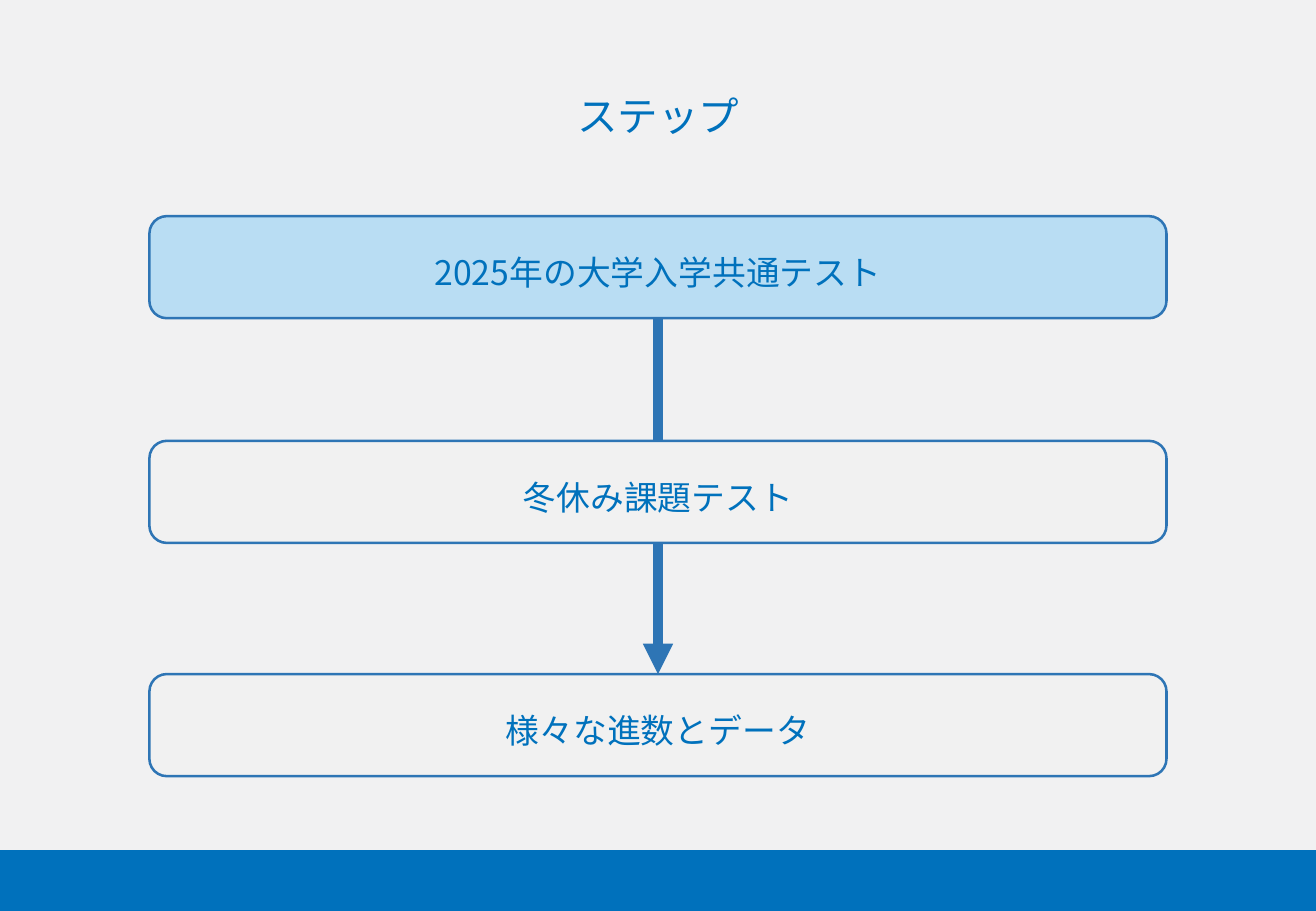
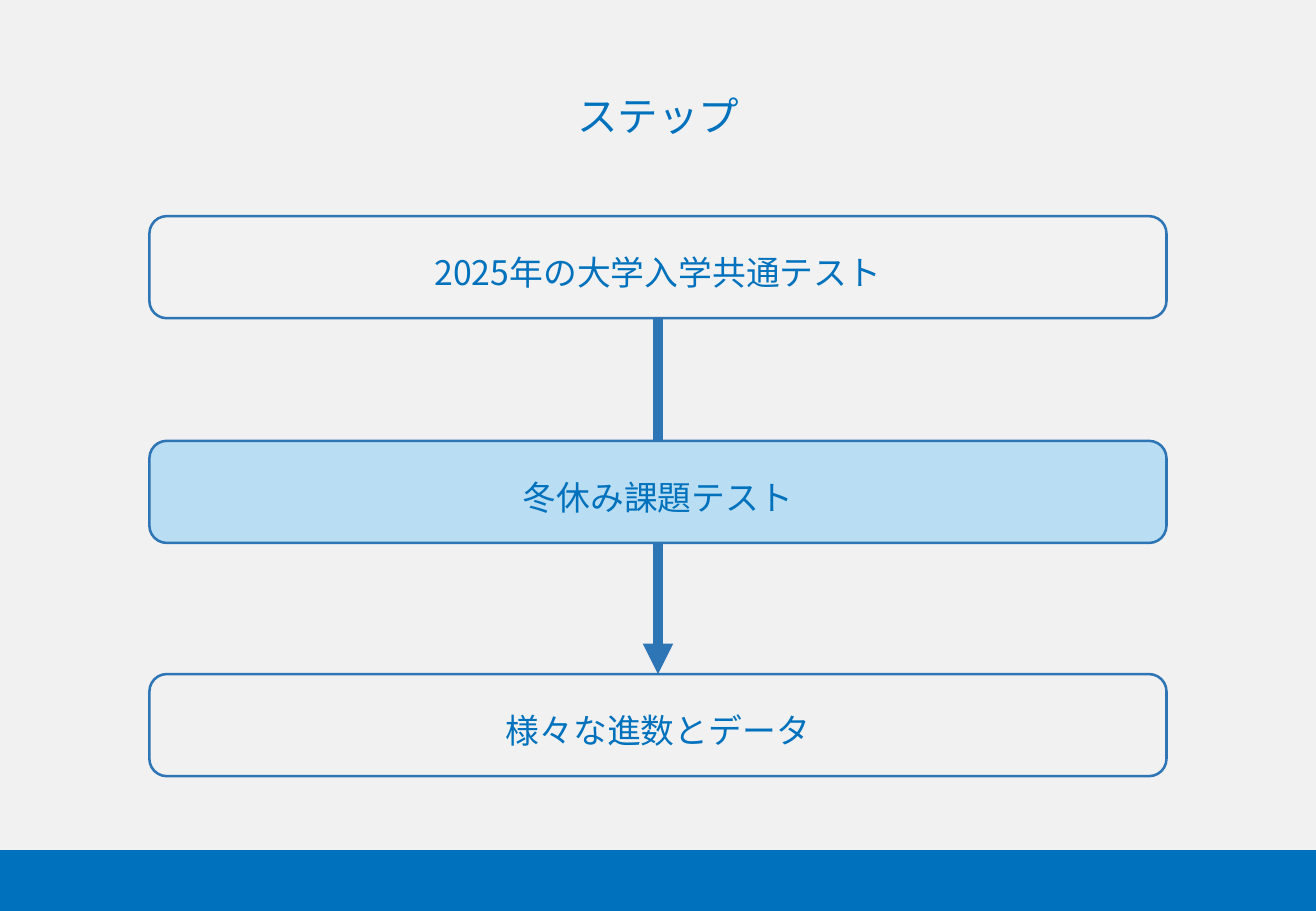
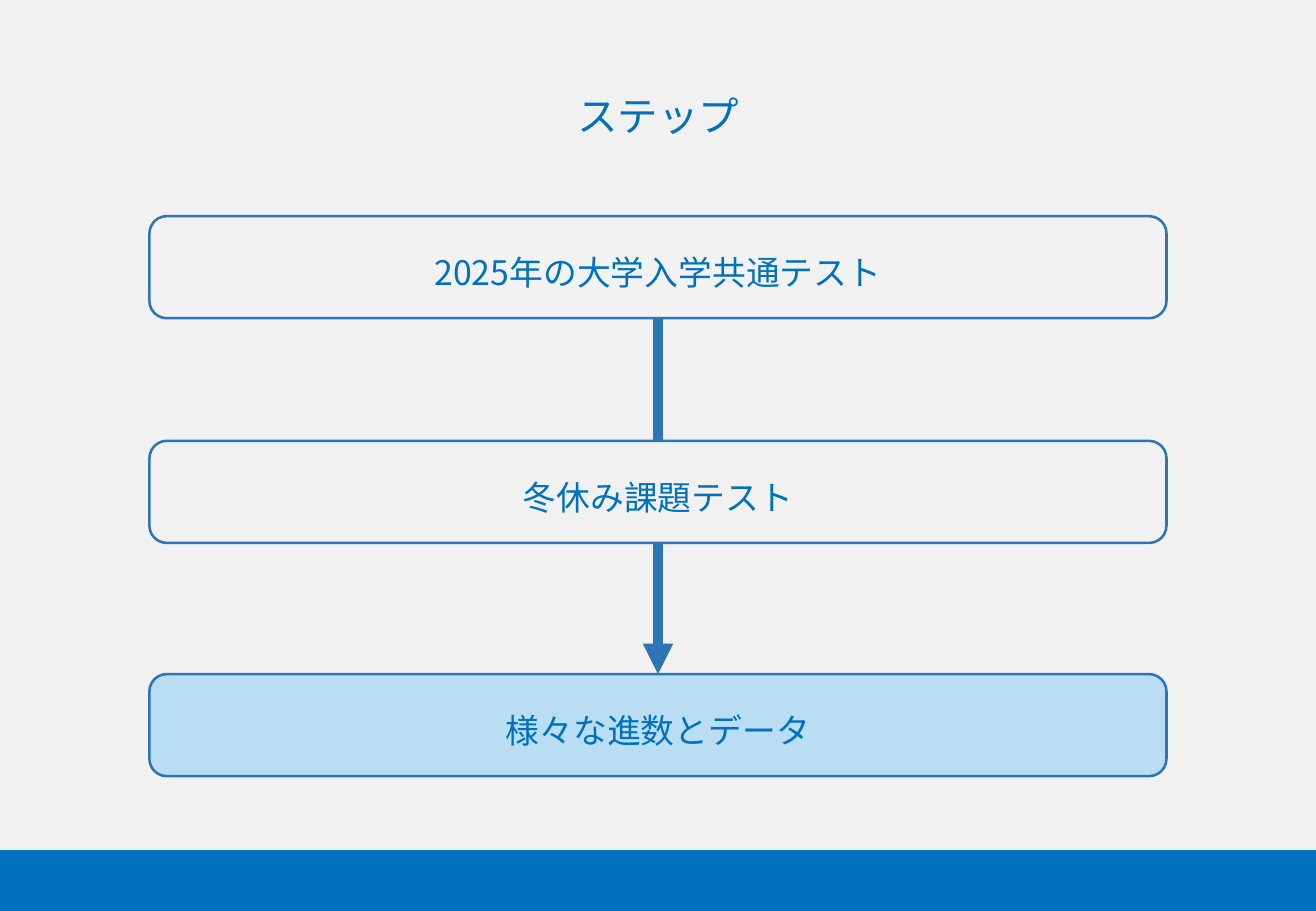
import math

from lxml import etree
from pptx import Presentation
from pptx.dml.color import RGBColor
from pptx.enum import shapes, text
from pptx.oxml.ns import qn
from pptx.util import Inches, Pt

BLUE = RGBColor(0x00, 0x71, 0xBC)
OUTLINE = RGBColor(0x2E, 0x75, 0xB5)
HIGHLIGHT = RGBColor(0xB9, 0xDD, 0xF3)
BACKGROUND = RGBColor(0xF1, 0xF1, 0xF2)
PALE = RGBColor(0xF1, 0xF1, 0xF1)
LIGHT = RGBColor(0xF2, 0xF2, 0xF2)
FONT = "Noto Sans CJK JP"

WIDTH, HEIGHT = 10.83, 7.5
BORDER, CORNER = 0.15, 0.05
BOX_LEFT, BOX_WIDTH, BOX_HEIGHT = 1.23, 8.37, 0.84
STEPS = [
    ("2025年の大学入学共通テスト", 1.78, LIGHT),
    ("冬休み課題テスト", 3.63, PALE),
    ("様々な進数とデータ", 5.55, PALE),
]


def write(target, words, size=20, color=BLUE, insets=(0, 0, 0, 0), wrap=True):
    frame = target.text_frame
    frame.auto_size = text.MSO_AUTO_SIZE.NONE
    frame.word_wrap = wrap
    frame.vertical_anchor = text.MSO_ANCHOR.MIDDLE
    frame.margin_left, frame.margin_top, frame.margin_right, frame.margin_bottom = map(Inches, insets)
    paragraph = frame.paragraphs[0]
    paragraph.alignment = text.PP_ALIGN.CENTER
    run = paragraph.add_run()
    run.text = words
    run.font.size = Pt(size)
    run.font.color.rgb = color
    run.font.name = FONT
    for properties in target.element.iter(qn("a:rPr")):
        etree.SubElement(properties, qn("a:ea"), typeface=FONT)


prs = Presentation()
prs.slide_width, prs.slide_height = Inches(WIDTH), Inches(HEIGHT)
background = prs.slide_master.background.fill
background.solid()
background.fore_color.rgb = BACKGROUND

layout = prs.slide_layouts.get_by_name("Title Only")
heading = layout.placeholders[0]
heading.left, heading.top = Inches(4.64), Inches(0.7)
heading.width, heading.height = Inches(1.55), Inches(0.5)

near, far_x, far_y = BORDER + CORNER, WIDTH - BORDER - CORNER, HEIGHT - BORDER - CORNER
corners = [(far_x, far_y), (near, far_y), (near, near), (far_x, near)]
inner_edge = []
for quarter, (x, y) in enumerate(corners):
    for step in range(7):
        angle = math.radians(quarter * 90 + step * 15)
        inner_edge.append((x + CORNER * math.cos(angle), y + CORNER * math.sin(angle)))

slides = [prs.slides.add_slide(layout) for _ in STEPS]

outline = slides[0].shapes.build_freeform(0, 0, scale=Inches(1))
outline.add_line_segments([(0, HEIGHT), (WIDTH, HEIGHT), (WIDTH, 0)])
outline.move_to(*inner_edge[0])
outline.add_line_segments(inner_edge[1:])
border = outline.convert_to_shape()
border.shadow.inherit = False
border.fill.solid()
border.fill.fore_color.rgb = BLUE
border.line.fill.background()
layout.shapes.element.append(border.element)

for current, slide in enumerate(slides):
    write(slide.shapes.title, "ステップ", size=24, wrap=False)

    arrow = slide.shapes.add_connector(shapes.MSO_CONNECTOR.STRAIGHT, 0, 0, 0, 0)
    arrow.line.color.rgb = OUTLINE
    arrow.line.width = Pt(6)
    etree.SubElement(arrow.line.fill and arrow.element.spPr.find(qn("a:ln")), qn("a:tailEnd"), type="triangle")
    etree.SubElement(arrow.element.spPr, qn("a:effectLst"))

    boxes = []
    for index, (words, top, fill) in enumerate(STEPS):
        box = slide.shapes.add_shape(
            shapes.MSO_SHAPE.ROUNDED_RECTANGLE,
            Inches(BOX_LEFT), Inches(top), Inches(BOX_WIDTH), Inches(BOX_HEIGHT),
        )
        box.adjustments[0] = 0.17
        box.shadow.inherit = False
        box.fill.solid()
        box.fill.fore_color.rgb = HIGHLIGHT if index == current else fill
        box.line.color.rgb = OUTLINE
        box.line.width = Pt(1.5)
        write(box, words, insets=(0.07, 0.08, 0.07, 0))
        boxes.append(box)

    arrow.begin_connect(boxes[0], 2)
    arrow.end_connect(boxes[-1], 0)

prs.save("out.pptx")
